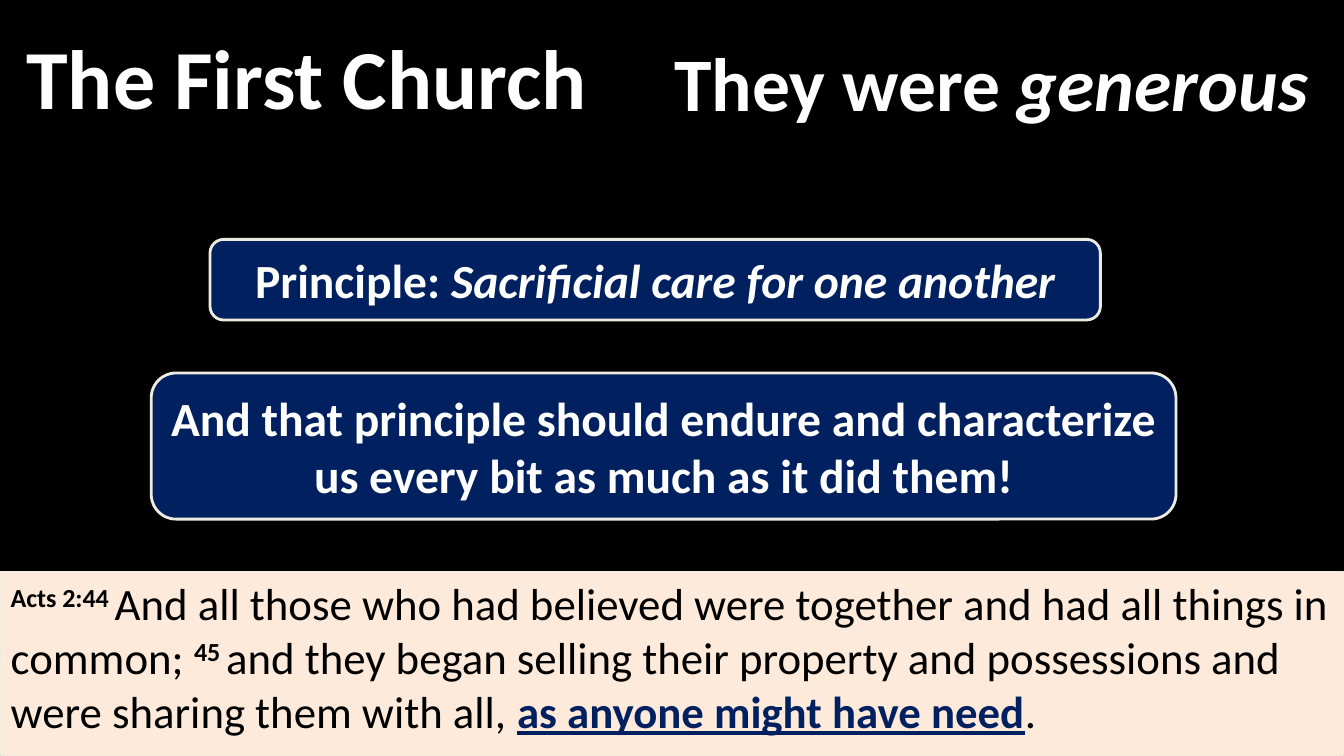
from pptx import Presentation
from pptx.dml.color import RGBColor
from pptx.enum.shapes import MSO_SHAPE as Shape
from pptx.enum.text import MSO_ANCHOR as Anchor, PP_ALIGN as Align
from pptx.util import Inches, Pt

BLACK = RGBColor(0x00, 0x00, 0x00)
WHITE = RGBColor(0xFF, 0xFF, 0xFF)
NAVY = RGBColor(0x00, 0x20, 0x60)
IVORY = RGBColor(0xEE, 0xEC, 0xE1)
PEACH = RGBColor(0xFD, 0xEA, 0xDA)


def add_span(para, text, size, color, font="Calibri", bold=False,
             italic=False, underline=False, raised=False):
    span = para.add_run()
    span.text = text
    span.font.name = font
    span.font.size = Pt(size)
    span.font.color.rgb = color
    span.font.bold = bold
    span.font.italic = italic
    span.font.underline = underline
    if raised:
        span._r.get_or_add_rPr().set("baseline", "30000")


class SlideBuilder:
    """Places elements on a grid of 160 columns by 90 rows."""
    COLUMNS, ROWS = 160, 90
    CALLOUT_SHAPE = (-0.22, 0.5, 0.17)  # tail x, tail y, corner radius

    def __init__(self, deck):
        self.page = deck.slides.add_slide(deck.slide_layouts[6])
        self.column = deck.slide_width / self.COLUMNS
        self.row = deck.slide_height / self.ROWS
        self.page.background.fill.solid()
        self.page.background.fill.fore_color.rgb = BLACK

    def box(self, kind, place, spans, size, color, fill=None, line_width=0,
            align=Align.CENTER, anchor=Anchor.MIDDLE):
        left, top, width, height = place
        box = self.page.shapes.add_shape(
            kind, round(left * self.column), round(top * self.row),
            round(width * self.column), round(height * self.row))
        box.shadow.inherit = False
        if fill is None:
            box.fill.background()
            box.line.fill.background()
        else:
            box.fill.solid()
            box.fill.fore_color.rgb = fill
            box.line.color.rgb = IVORY
            box.line.width = Pt(line_width)
        box.text_frame.word_wrap = True
        box.text_frame.vertical_anchor = anchor
        para = box.text_frame.paragraphs[0]
        para.alignment = align
        for text, style in spans:
            add_span(para, text, **{"size": size, "color": color, **style})
        return box

    def callout(self, place, spans, size, **style):
        box = self.box(Shape.ROUNDED_RECTANGULAR_CALLOUT, place,
                       [(text, {"bold": True, **extra}) for text, extra in spans],
                       size, WHITE, **style)
        for index, value in enumerate(self.CALLOUT_SHAPE):
            box.adjustments[index] = value

    def heading(self, place, spans, size):
        self.callout(place, spans, size)

    def principle(self, place, spans):
        self.callout(place, spans, 34, fill=NAVY, line_width=2)

    def scripture(self, place, spans):
        self.box(Shape.RECTANGLE, place, spans, 32, BLACK, fill=PEACH,
                 line_width=0.75, align=Align.LEFT, anchor=Anchor.TOP)


def main():
    deck = Presentation()
    deck.slide_width, deck.slide_height = Inches(13.33), Inches(7.5)
    slide = SlideBuilder(deck)
    italic = {"italic": True}
    verse_number = {"bold": True, "raised": True}

    # Headings
    slide.heading((0, 4, 73, 10), [("The First Church", {})], 60)
    slide.heading((78, 4.7, 80, 10),
                  [("They were ", {}), ("generous ", italic)], 54)

    # Principle and its application
    slide.principle((18, 44.4, 122, 17.4), [
        ("And that principle should endure and characterize "
         "us every bit as much as it did them!", {})])
    slide.principle((25, 28.5, 106, 9.6), [
        ("Principle: ", {}), ("Sacrificial care for one another", italic)])

    # Scripture passage
    slide.scripture((0.1, 68, 159.8, 21.9), [
        ("Acts 2:44 ", verse_number),
        ("And all those who had believed were together and had all things "
         "in common; ", {}),
        ("45 ", verse_number),
        ("and they began selling their property and possessions and were "
         "sharing them with all, ", {}),
        ("as anyone might have need",
         {"color": NAVY, "bold": True, "underline": True}),
        (". ", {})])

    deck.save("out.pptx")


if __name__ == "__main__":
    main()
